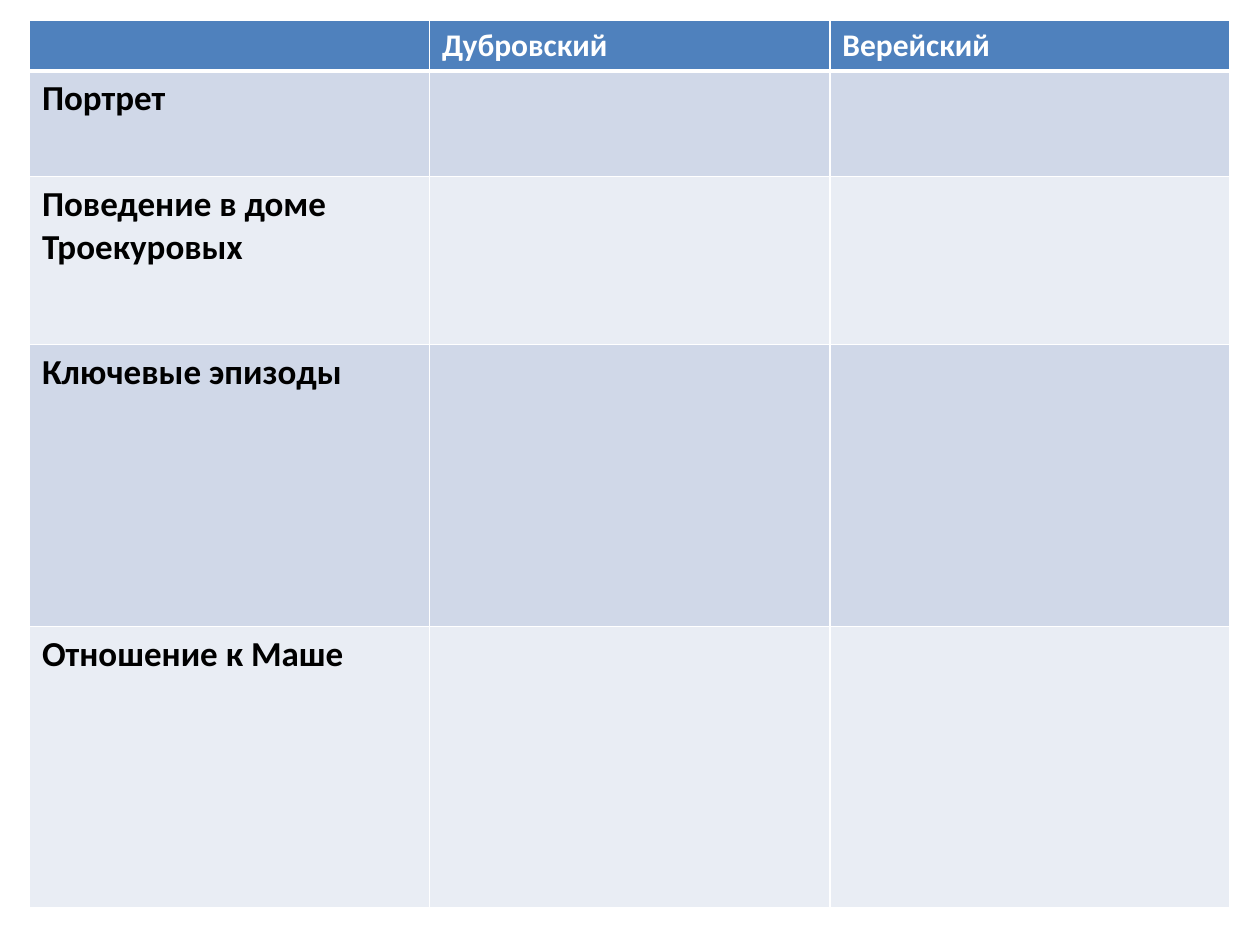
from lxml.etree import SubElement
from pptx import Presentation
from pptx.dml.color import RGBColor as RGB
from pptx.oxml.ns import qn
from pptx.util import Pt

COLORS = {
    "header": "4F81BD",
    "odd": "D0D8E8",
    "even": "E9EDF4",
    "white": "FFFFFF",
    "black": "000000",
}
ROWS = [
    ["", "Дубровский", "Верейский"],
    ["Портрет", "", ""],
    ["Поведение в доме Троекуровых", "", ""],
    ["Ключевые эпизоды", "", ""],
    ["Отношение к Маше", "", ""],
]
HEIGHTS = [27.4, 60.5, 96, 161, 161]
COL_WIDTH = 228.7


def add_border(cell, side, width):
    """Add a white line to one side (L, R, T or B) of the cell."""
    ln = SubElement(cell._tc.get_or_add_tcPr(), qn(f"a:ln{side}"), w=str(Pt(width)))
    fill = SubElement(ln, qn("a:solidFill"))
    SubElement(fill, qn("a:srgbClr"), val=COLORS["white"])


prs = Presentation()
prs.slide_width, prs.slide_height = Pt(720), Pt(540)
slide = prs.slides.add_slide(prs.slide_layouts[6])

table = slide.shapes.add_table(
    len(ROWS), len(ROWS[0]), Pt(16.8), Pt(11.3), Pt(3 * COL_WIDTH), Pt(sum(HEIGHTS))
).table
for col in table.columns:
    col.width = Pt(COL_WIDTH)

for i, (texts, height) in enumerate(zip(ROWS, HEIGHTS)):
    table.rows[i].height = Pt(height)
    is_header = i == 0
    fill = "header" if is_header else "odd" if i % 2 else "even"
    for j, text in enumerate(texts):
        cell = table.cell(i, j)
        # Borders come before the fill in the cell properties
        for side in "LRTB":
            under_header = (i, side) in [(0, "B"), (1, "T")]
            add_border(cell, side, 3 if under_header else 1)
        cell.fill.solid()
        cell.fill.fore_color.rgb = RGB.from_string(COLORS[fill])
        if not text:
            continue
        cell.text_frame.text = text
        font = cell.text_frame.paragraphs[0].runs[0].font
        font.name = "Calibri"
        font.size = Pt(18 if is_header else 20)
        font.bold = True
        font.color.rgb = RGB.from_string(COLORS["white" if is_header else "black"])

prs.save("out.pptx")
